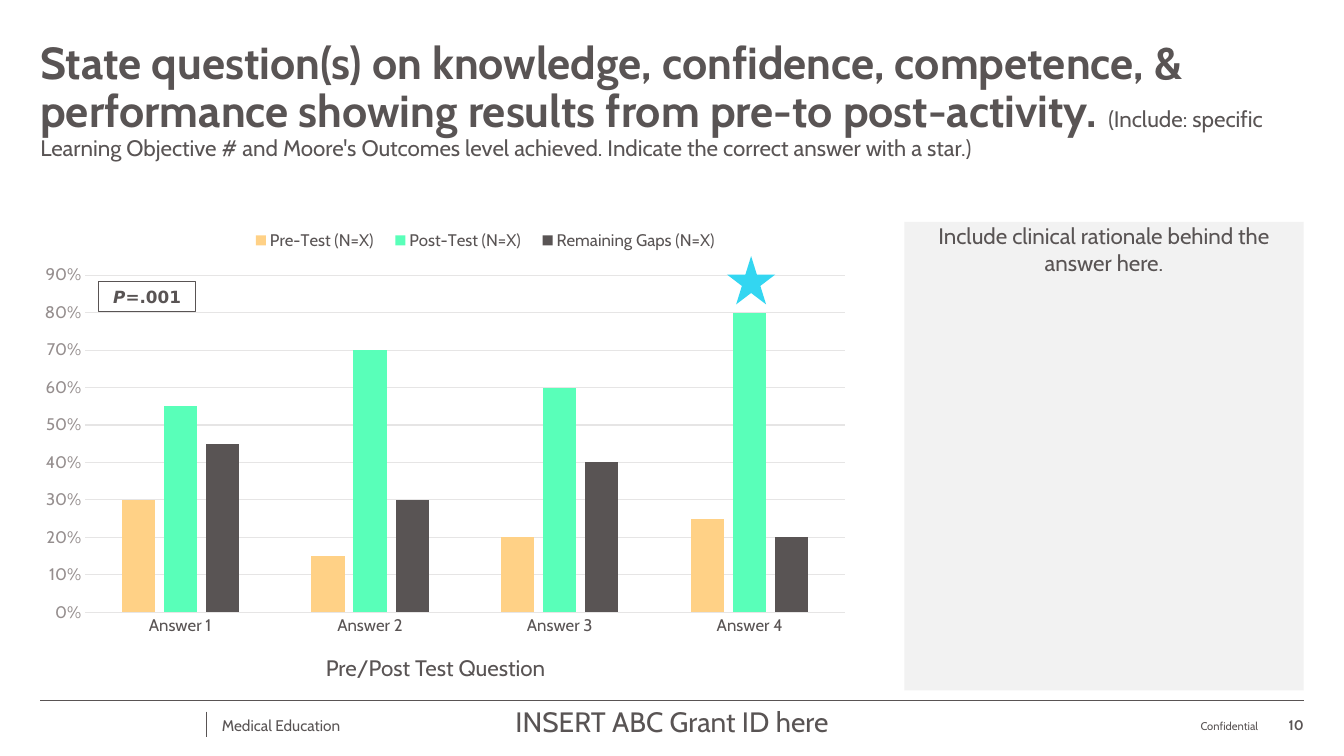
from lxml import etree
from pptx import Presentation
from pptx.chart.data import CategoryChartData
from pptx.dml.color import RGBColor
from pptx.enum.chart import XL_CHART_TYPE, XL_LEGEND_POSITION, XL_TICK_MARK
from pptx.enum.shapes import MSO_CONNECTOR, MSO_SHAPE
from pptx.enum.text import MSO_ANCHOR, MSO_AUTO_SIZE, PP_ALIGN
from pptx.oxml.ns import qn
from pptx.util import Pt

PX = 9144  # 100 px to the inch
LEFT, MID, RIGHT = PP_ALIGN.LEFT, PP_ALIGN.CENTER, PP_ALIGN.RIGHT
TOP, CENTRE, BASE = MSO_ANCHOR.TOP, MSO_ANCHOR.MIDDLE, MSO_ANCHOR.BOTTOM
RECT, STAR = MSO_SHAPE.RECTANGLE, MSO_SHAPE.STAR_5_POINT
STRAIGHT = MSO_CONNECTOR.STRAIGHT
COLUMN = XL_CHART_TYPE.COLUMN_CLUSTERED
BELOW = XL_LEGEND_POSITION.BOTTOM
NO_TICK = XL_TICK_MARK.NONE
FONT, STAT_FONT = "Cabin", "DejaVu Sans"
HUES = {
    "ink": "595454", "axis": "958E8E", "grid": "E6E5E5", "panel": "F2F2F2",
    "white": "FFFFFF", "star": "33D6F1", "pre": "FFD186", "post": "59FFB9",
}


def hue(name):
    return RGBColor.from_string(HUES[name])


def place(after, inner=False, **spots):
    """Add a manual chart layout behind a sibling element, in chart fractions."""
    layout = etree.Element(qn("c:layout"))
    manual = etree.SubElement(layout, qn("c:manualLayout"))
    if inner:
        etree.SubElement(manual, qn("c:layoutTarget")).set("val", "inner")
    for axis in "xy":
        etree.SubElement(manual, qn(f"c:{axis}Mode")).set("val", "edge")
    for key, val in spots.items():
        etree.SubElement(manual, qn(f"c:{key}")).set("val", str(val))
    after.addnext(layout)
    return layout


class Deck:
    def __init__(self, wide, high):
        self.prs = Presentation()
        self.prs.slide_width, self.prs.slide_height = wide * PX, high * PX
        self.slide = self.prs.slides.add_slide(self.prs.slide_layouts[5])
        self.shapes = self.slide.shapes

    def style(self, font, size, color="ink", bold=False, face=FONT):
        font.name, font.size, font.bold = face, Pt(size), bold
        font.color.rgb = hue(color)

    def fill(self, shape, runs, align, anchor, face=FONT):
        """Write runs of (text, size, bold, italic) as one paragraph."""
        frame = shape.text_frame
        frame.word_wrap, frame.auto_size = True, MSO_AUTO_SIZE.NONE
        frame.margin_left = frame.margin_right = 0
        frame.margin_top = frame.margin_bottom = 0
        frame.vertical_anchor = anchor
        para = frame.paragraphs[0]
        para.alignment = align
        for text, size, bold, italic in runs:
            run = para.add_run()
            run.text = text
            self.style(run.font, size, bold=bold, face=face)
            run.font.italic = italic
        return para

    def title(self, box, runs):
        head = self.shapes.title
        head.left, head.top, head.width, head.height = (n * PX for n in box)
        self.fill(head, runs, LEFT, TOP).line_spacing = 0.9

    def text(self, box, text, size, align=LEFT, anchor=TOP, bold=False):
        shape = self.shapes.add_textbox(*(n * PX for n in box))
        self.fill(shape, [(text, size, bold, False)], align, anchor)

    def shape(self, kind, box, color, edge=None):
        shape = self.shapes.add_shape(kind, *(n * PX for n in box))
        shape.shadow.inherit = False
        shape.fill.solid()
        shape.fill.fore_color.rgb = hue(color)
        if edge:
            shape.line.color.rgb = hue(edge)
            shape.line.width = Pt(0.75)
        else:
            shape.line.fill.background()
        return shape

    def line(self, *ends):
        line = self.shapes.add_connector(STRAIGHT, *(n * PX for n in ends))
        line.line.color.rgb = hue("ink")
        line.line.width = Pt(0.5)
        etree.SubElement(line._element.spPr, qn("a:effectLst"))

    def chart(self, box, cats, rows):
        data = CategoryChartData(number_format="0%")
        data.categories = cats
        for name, _, vals in rows:
            data.add_series(name, vals)
        frame = self.shapes.add_chart(COLUMN, *(n * PX for n in box), data)
        chart = frame.chart
        chart.has_title = False
        self.style(chart.font, 10)
        plot = chart.plots[0]
        plot.gap_width, plot.overlap, plot.vary_by_categories = 219, -27, False
        for bars, (_, color, _) in zip(plot.series, rows):
            bars.format.fill.solid()
            bars.format.fill.fore_color.rgb = hue(color)
        self.axes(chart)
        self.legend(chart)
        area = chart._chartSpace.chart.plotArea
        for old in area.findall(qn("c:layout")):
            area.remove(old)
        area.insert(0, place(area[0], inner=True, x=0.054, y=0.164, w=0.913, h=0.669))

    def axes(self, chart):
        cat, val = chart.category_axis, chart.value_axis
        for axis, color in ((cat, "ink"), (val, "axis")):
            axis.major_tick_mark = axis.minor_tick_mark = NO_TICK
            self.style(axis.tick_labels.font, 12, color)
        val.minimum_scale, val.maximum_scale, val.major_unit = 0, 0.9, 0.1
        val.tick_labels.number_format = "0%"
        val.tick_labels.number_format_is_linked = False
        val.format.line.fill.background()
        val.has_major_gridlines = True
        for part in (cat, val.major_gridlines):
            part.format.line.color.rgb = hue("grid")
            part.format.line.width = Pt(0.75)

    def legend(self, chart):
        chart.has_legend = True
        key = chart.legend
        key.position, key.include_in_layout = BELOW, False
        self.style(key.font, 12)
        place(key._element.find(qn("c:legendPos")), x=0.24, y=0.06, w=0.59, h=0.07)


def main():
    deck = Deck(1333, 750)
    deck.title((40, 40, 1253, 177), [
        ("State question(s) on knowledge, confidence, competence, & performance "
         "showing results from pre-to post-activity. ", 32, True, False),
        ("(Include: specific Learning Objective # and Moore's Outcomes level "
         "achieved. Indicate the correct answer with a star.)", 16, False, False),
    ])

    deck.chart((40, 191, 825, 500), [f"Answer {n}" for n in range(1, 5)], [
        ("Pre-Test (N=X)", "pre", (0.3, 0.15, 0.2, 0.25)),
        ("Post-Test (N=X)", "post", (0.55, 0.7, 0.6, 0.8)),
        ("Remaining Gaps (N=X)", "ink", (0.45, 0.3, 0.4, 0.2)),
    ])
    deck.shape(STAR, (721, 254, 48, 48), "star")
    stat = deck.shape(RECT, (98, 279, 96, 30), "white", "ink")
    deck.fill(stat, [("P", 12, True, True), ("=.001", 12, True, False)],
              MID, CENTRE, STAT_FONT)
    deck.text((81, 649, 702, 33), "Pre/Post Test Question", 16, MID)

    panel = deck.shape(RECT, (897, 220, 396, 465), "panel")
    note = "Include clinical rationale behind the answer here."
    deck.fill(panel, [(note, 16, False, False)], MID, TOP)

    deck.line(40, 695, 1293, 695)
    deck.line(205, 706, 205, 731)
    deck.text((220, 707, 180, 25), "Medical Education", 11, anchor=CENTRE)
    deck.text((403, 696, 527, 40), "INSERT ABC Grant ID here", 20, MID, CENTRE)
    deck.text((897, 703, 351, 24), "Confidential", 8, RIGHT, BASE)
    deck.text((1258, 703, 35, 25), "10", 10, RIGHT, BASE, True)
    deck.prs.save("out.pptx")


if __name__ == "__main__":
    main()
